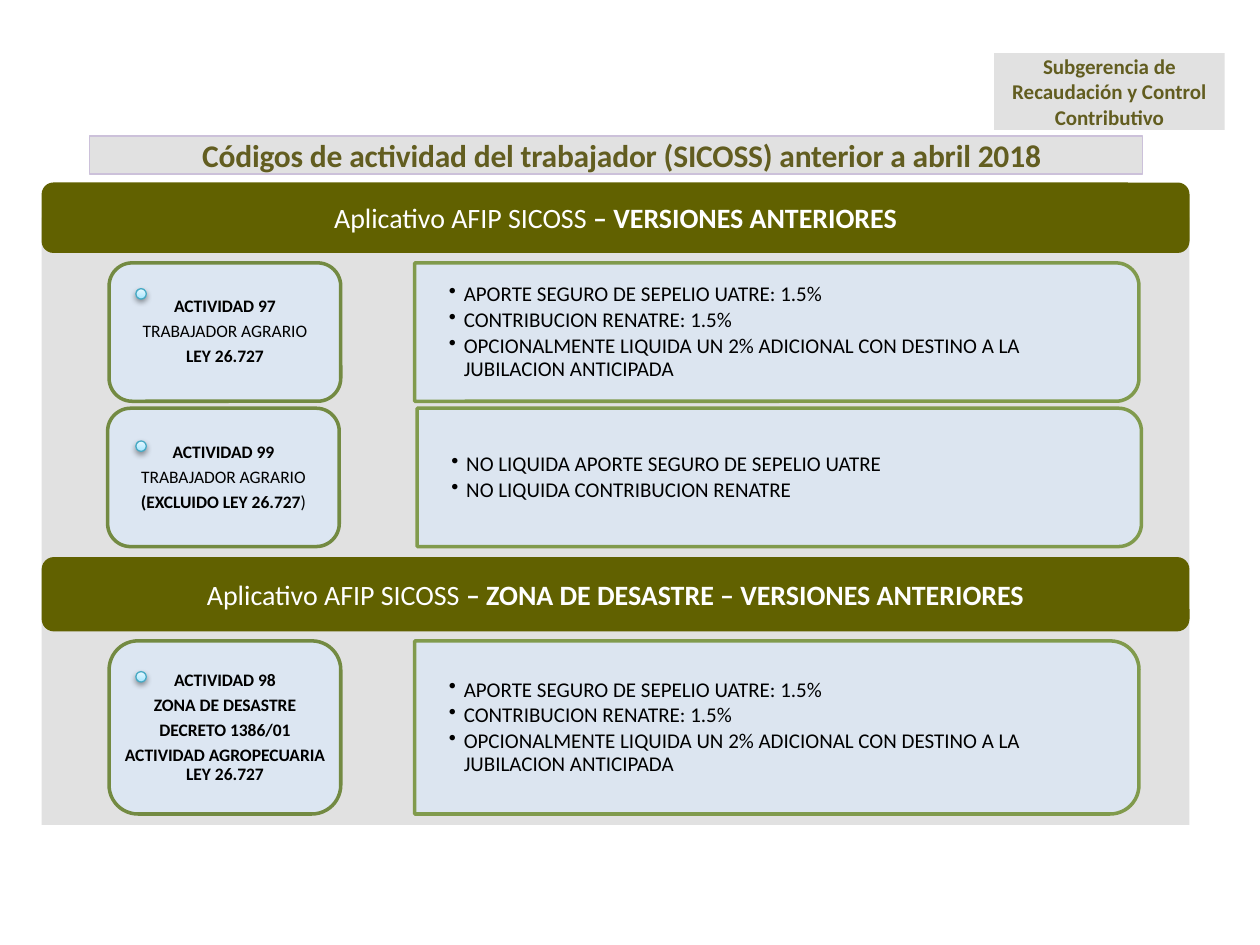
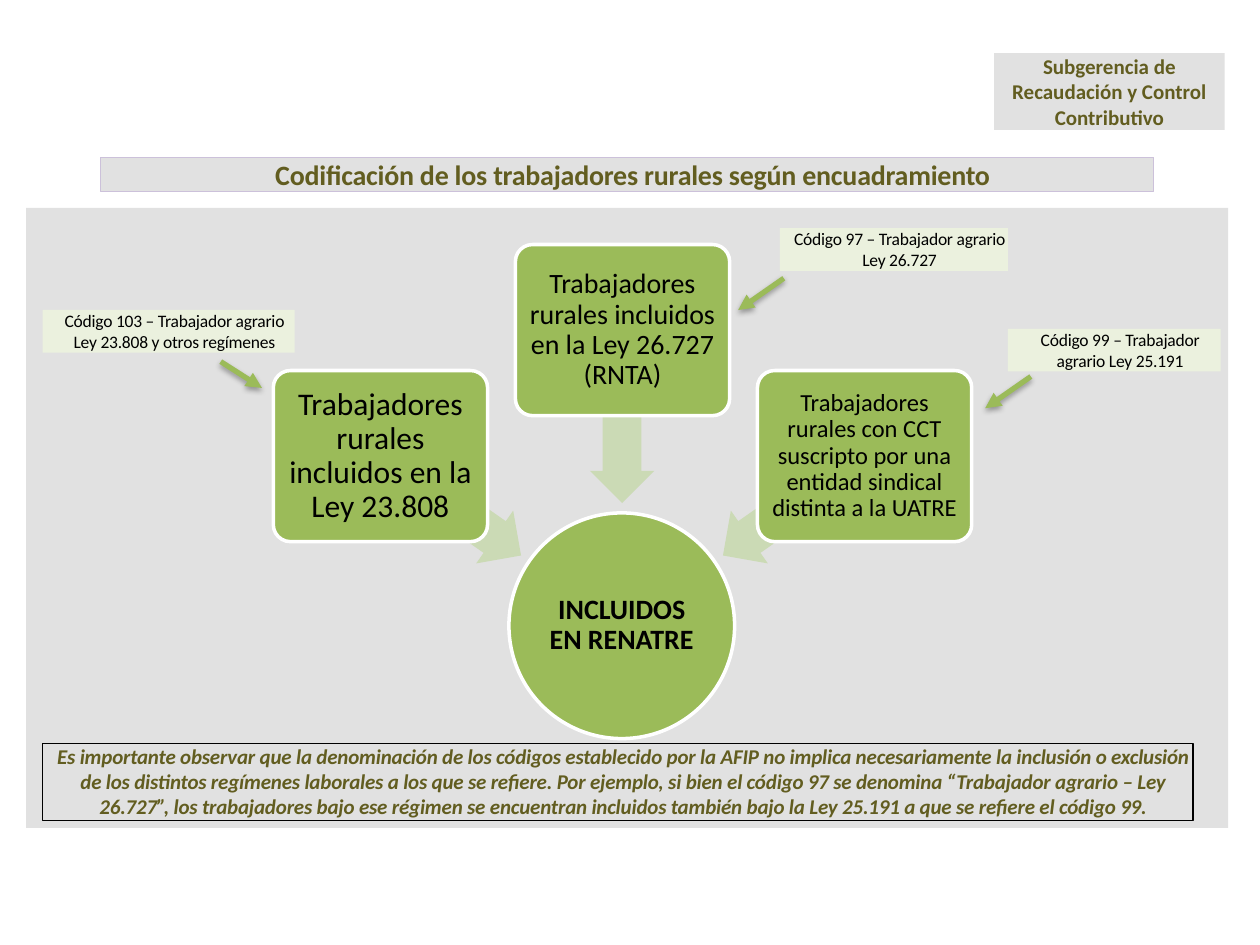
import pptx
import pptx.dml.color
import pptx.enum.shapes
import pptx.enum.text
import pptx.oxml
import pptx.oxml.ns
import pptx.util
from lxml import etree

Cm, Pt = pptx.util.Cm, pptx.util.Pt
SHAPE = pptx.enum.shapes.MSO_SHAPE
ANCHOR = pptx.enum.text.MSO_ANCHOR
ALIGN = pptx.enum.text.PP_ALIGN
qn = pptx.oxml.ns.qn

# Shared look
FONT = "Calibri"
GREY, OLIVE, BAND = "E1E1E1", "625D20", "616100"
LILAC, WHITE, BLACK = "CCC1DA", "FFFFFF", "000000"
PALE_BLUE, CARD_EDGE, DETAIL_EDGE = "DCE6F2", "738A42", "77933C"
GREEN, PALE_GREEN, ARROW_GREEN = "9BBB59", "EBF1DE", "CBDAB5"
DOT_EDGE, DOT_DARK, DOT_LIGHT = "46AAC5", "A7E6FF", "E7F8FF"

BURIAL_FEES = [
    "APORTE SEGURO DE SEPELIO UATRE: 1.5%",
    "CONTRIBUCION RENATRE: 1.5%",
    "OPCIONALMENTE LIQUIDA UN 2% ADICIONAL CON DESTINO A LA JUBILACION ANTICIPADA",
]


# Basic helpers
def color(hex_code):
    return pptx.dml.color.RGBColor.from_string(hex_code)


def add_box(slide, kind, place, fill, edge=None, width=0.75):
    """Add a preset shape; place is left, top, width, height in cm."""
    shape = slide.shapes.add_shape(kind, *map(Cm, place))
    shape.shadow.inherit = False
    shape.fill.solid()
    shape.fill.fore_color.rgb = color(fill)
    if edge:
        shape.line.color.rgb = color(edge)
        shape.line.width = Pt(width)
    else:
        shape.line.fill.background()
    return shape


def add_shadow(shape, opacity):
    """Drop a soft shadow straight down; opacity is in percent."""
    properties = shape._element.spPr
    effects = properties.find(qn("a:effectLst"))
    if effects is None:
        effects = etree.SubElement(properties, qn("a:effectLst"))
    shadow = etree.SubElement(effects, qn("a:outerShdw"), blurRad="40000",
                              dist="20000", dir="5400000", rotWithShape="0")
    shadow_color = etree.SubElement(shadow, qn("a:srgbClr"), val=BLACK)
    etree.SubElement(shadow_color, qn("a:alpha"), val=str(opacity * 1000))


def write(shape, lines, size, hex_code=BLACK, margins=(0, 0), anchor=ANCHOR.MIDDLE,
          align=ALIGN.CENTER, spacing=None, after=0, indent=0, bullet=False,
          tracking=0, italic=False):
    """Write one paragraph per line; parts between asterisks are bold."""
    frame = shape.text_frame
    frame.word_wrap = True
    frame.vertical_anchor = anchor
    frame.margin_left = frame.margin_right = Cm(margins[0])
    frame.margin_top = frame.margin_bottom = Cm(margins[1])
    for number, line in enumerate(lines):
        paragraph = frame.add_paragraph() if number else frame.paragraphs[0]
        paragraph.alignment = align
        if spacing:
            paragraph.line_spacing = spacing
        if after:
            paragraph.space_after = Pt(after)
        properties = paragraph._p.get_or_add_pPr()
        if indent:
            properties.set("marL", str(Cm(indent)))
            properties.set("indent", str(-Cm(indent) if bullet else 0))
        if bullet:
            etree.SubElement(properties, qn("a:buChar"), char="•")
        for position, part in enumerate(line.split("*")):
            if not part:
                continue
            run = paragraph.add_run()
            run.text = part
            run.font.name = FONT
            run.font.size = Pt(size)
            run.font.bold = position % 2 == 1
            run.font.italic = italic
            run.font.color.rgb = color(hex_code)
            if tracking:
                run._r.get_or_add_rPr().set("spc", str(tracking))


# Elements common to both slides
def add_strip(slide, place, text, size, hex_code, fill, edge=None, italic=False):
    """Add a tight rectangle of slightly condensed text."""
    strip = add_box(slide, SHAPE.RECTANGLE, place, fill, edge)
    write(strip, [text], size, hex_code, anchor=ANCHOR.TOP, indent=0.23,
          tracking=-10, italic=italic)


def add_page(presentation, title, title_place, title_size, panel_place):
    slide = presentation.slides.add_slide(presentation.slide_layouts[6])
    office = add_box(slide, SHAPE.RECTANGLE, (20.04, 1.07, 4.65, 1.55), GREY)
    write(office, ["*Subgerencia de Recaudación y Control Contributivo*"], 12, OLIVE)
    add_strip(slide, title_place, f"*{title}*", title_size, OLIVE, GREY, LILAC)
    add_box(slide, SHAPE.RECTANGLE, panel_place, GREY)
    return slide


# Elements of the activity codes slide
def add_band(slide, top, height, text):
    band = add_box(slide, SHAPE.ROUNDED_RECTANGLE, (0.84, top, 23.14, height), BAND)
    write(band, [text], 16, WHITE)


def add_detail(slide, left, top, height, lines):
    """Add a panel rounded on its right side, with a bulleted list."""
    width = 14.6
    turned = (left + (width - height) / 2, top + (height - width) / 2, height, width)
    panel = add_box(slide, SHAPE.ROUND_2_SAME_RECTANGLE, turned, PALE_BLUE, DETAIL_EDGE, 2)
    panel.rotation = 90
    for paint in panel._element.spPr.iter(qn("a:srgbClr")):
        etree.SubElement(paint, qn("a:alpha"), val="90000")
    text_box = slide.shapes.add_textbox(*map(Cm, (left, top, width - 0.13, height)))
    write(text_box, lines, 12, margins=(0.69, 0.36), align=ALIGN.LEFT,
          spacing=0.9, after=1.8, indent=0.3, bullet=True)


def add_activity(slide, left, top, height, dot_top, detail_left, lines, details):
    add_detail(slide, detail_left, top, height, details)
    card = add_box(slide, SHAPE.ROUNDED_RECTANGLE, (left, top, 4.67, height),
                   PALE_BLUE, CARD_EDGE, 2)
    write(card, lines, 10, margins=(0.1, 0.05), spacing=0.9, after=3.5)
    dot = add_box(slide, SHAPE.OVAL, (2.74, dot_top, 0.21, 0.21), DOT_LIGHT, DOT_EDGE)
    dot.fill.gradient()
    dot.fill.gradient_angle = 90
    for stop, shade in zip(dot.fill.gradient_stops, (DOT_DARK, DOT_LIGHT)):
        stop.color.rgb = color(shade)
    add_shadow(dot, 38)


def build_activity_codes(presentation):
    slide = add_page(presentation,
                     "Códigos de actividad del trabajador (SICOSS) anterior a abril 2018",
                     (1.8, 2.74, 21.23, 0.77), 18, (0.84, 4.39, 23.14, 12.24))
    add_band(slide, 3.68, 1.42, "Aplicativo AFIP SICOSS *– VERSIONES ANTERIORES*")
    add_activity(slide, 2.2, 5.3, 2.79, 5.82, 8.36,
                 ["*ACTIVIDAD 97*", "TRABAJADOR AGRARIO", "*LEY 26.727*"], BURIAL_FEES)
    add_activity(slide, 2.17, 8.23, 2.79, 8.89, 8.41,
                 ["*ACTIVIDAD 99*", "TRABAJADOR AGRARIO", "*(EXCLUIDO LEY 26.727*)"],
                 ["NO LIQUIDA APORTE SEGURO DE SEPELIO UATRE",
                  "NO LIQUIDA CONTRIBUCION RENATRE"])
    add_activity(slide, 2.2, 12.92, 3.49, 13.54, 8.36,
                 ["*ACTIVIDAD 98*", "*ZONA DE DESASTRE*", "*DECRETO 1386/01*",
                  "*ACTIVIDAD AGROPECUARIA LEY 26.727*"], BURIAL_FEES)
    add_band(slide, 11.23, 1.5,
             "Aplicativo AFIP SICOSS *– ZONA DE DESASTRE – VERSIONES ANTERIORES*")


# Elements of the worker classification slide
def add_worker_group(slide, left, top, text, size, arrow_left, arrow_top, angle):
    """Add a group of workers and its block arrow towards the hub."""
    arrow = add_box(slide, SHAPE.LEFT_ARROW, (arrow_left, arrow_top, 3.48, 1.3), ARROW_GREEN)
    arrow.adjustments[0] = 0.6
    arrow.rotation = angle
    node = add_box(slide, SHAPE.ROUNDED_RECTANGLE, (left, top, 4.32, 3.45), GREEN, WHITE, 2)
    node.adjustments[0] = 0.1
    write(node, [text], size, margins=(0.09, 0.09), spacing=0.9)


def add_pointer(slide, start, end):
    pointer = slide.shapes.add_connector(pptx.enum.shapes.MSO_CONNECTOR.STRAIGHT,
                                         *map(Cm, start + end))
    pointer.line.color.rgb = color(GREEN)
    pointer.line.width = Pt(3)
    etree.SubElement(pointer.line._get_or_add_ln(), qn("a:tailEnd"), type="triangle")
    add_shadow(pointer, 35)


def build_worker_classification(presentation):
    slide = add_page(presentation,
                     "Codificación de los trabajadores rurales según encuadramiento",
                     (2.03, 3.17, 21.23, 0.69), 16, (0.53, 4.19, 24.23, 12.5))
    hub = add_box(slide, SHAPE.OVAL, (10.26, 10.34, 4.55, 4.55), GREEN, WHITE, 2)
    write(hub, ["*INCLUIDOS EN RENATRE*"], 16, margins=(0.03, 0.03), spacing=0.9)

    groups = [
        (7.47, "Trabajadores rurales incluidos en la Ley 23.808", 18, 9.55, 215),
        (4.93, "Trabajadores rurales incluidos en la Ley 26.727 (RNTA)", 16, 7.75, 270),
        (7.47, "Trabajadores rurales con CCT suscripto por una entidad sindical "
               "distinta a la UATRE", 14, 9.55, 325),
    ]
    for column, (top, text, size, arrow_top, angle) in enumerate(groups):
        add_worker_group(slide, 5.51 + 4.88 * column, top, text, size,
                         7.34 + 3.46 * column, arrow_top, angle)

    # Code labels with their pointers
    labels = [
        ((0.86, 6.25, 5.08, 0.86),
         "Código 103 – Trabajador agrario Ley 23.808 y otros regímenes",
         (4.45, 7.29), (5.28, 7.82)),
        ((15.72, 4.6, 4.6, 0.86), "Código 97 – Trabajador agrario Ley 26.727",
         (15.8, 5.61), (14.88, 6.25)),
        ((20.32, 6.63, 4.29, 0.86), "Código 99 – Trabajador agrario Ley 25.191",
         (20.78, 7.59), (19.86, 8.23)),
    ]
    for place, text, start, end in labels:
        add_strip(slide, place, text, 10, BLACK, PALE_GREEN)
        add_pointer(slide, start, end)

    # Closing remark
    add_strip(slide, (0.86, 14.99, 23.19, 1.55),
              "*Es importante observar que la denominación de los códigos establecido por "
              "la AFIP no implica necesariamente la inclusión o exclusión de los distintos "
              "regímenes laborales a los que se refiere. Por ejemplo, si bien el código 97 "
              "se denomina “Trabajador agrario – Ley 26.727”, los trabajadores bajo ese "
              "régimen se encuentran incluidos también bajo la Ley 25.191 a que se refiere "
              "el código 99.*", 12, OLIVE, GREY, BLACK, italic=True)


def main():
    presentation = pptx.Presentation()
    presentation.slide_width = Cm(25.4)
    presentation.slide_height = Cm(19.05)
    build_activity_codes(presentation)
    build_worker_classification(presentation)
    presentation.save("out.pptx")


if __name__ == "__main__":
    main()
